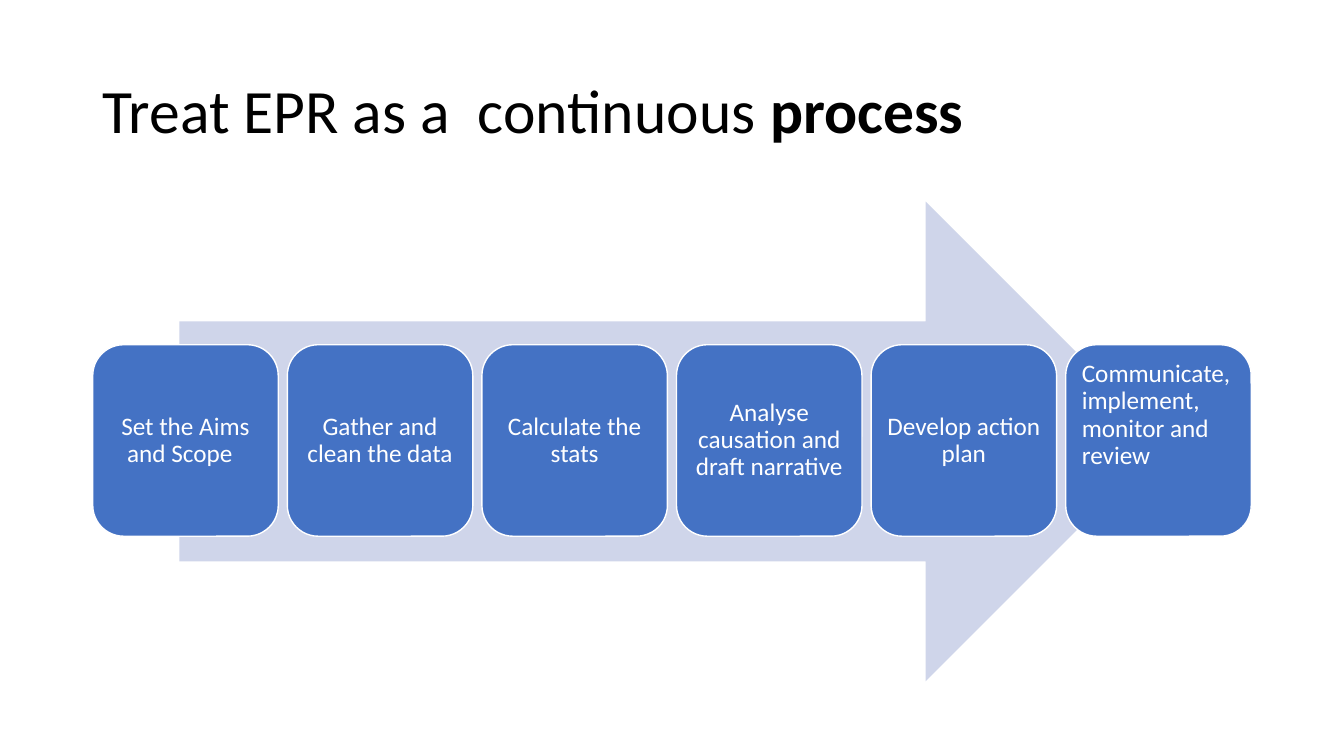
from dataclasses import dataclass

from pptx import Presentation
from pptx.dml.color import RGBColor
from pptx.enum.shapes import MSO_SHAPE
from pptx.enum.text import MSO_ANCHOR, PP_ALIGN
from pptx.util import Inches, Pt


@dataclass(frozen=True)
class Theme:
    font: str = "Calibri"
    title_size: int = 44
    step_size: int = 18
    black: str = "000000"
    white: str = "FFFFFF"
    arrow: str = "CFD5EA"
    step: str = "4472C4"


theme = Theme()


def write_text(shape, *runs, size, color, align=PP_ALIGN.LEFT,
               anchor=MSO_ANCHOR.MIDDLE, margins=(0.1, 0.05)):
    frame = shape.text_frame
    frame.word_wrap = True
    frame.vertical_anchor = anchor
    frame.margin_left = frame.margin_right = Inches(margins[0])
    frame.margin_top = frame.margin_bottom = Inches(margins[1])
    paragraph = frame.paragraphs[0]
    paragraph.alignment = align
    paragraph.line_spacing = 0.9
    for text, bold in runs:
        run = paragraph.add_run()
        run.text = text
        run.font.name = theme.font
        run.font.size = Pt(size)
        run.font.bold = bold
        run.font.color.rgb = RGBColor.from_string(color)


def add_filled_shape(kind, left, top, width, height, fill, line=None):
    shape = slide.shapes.add_shape(
        kind, Inches(left), Inches(top), Inches(width), Inches(height))
    shape.shadow.inherit = False
    shape.fill.solid()
    shape.fill.fore_color.rgb = RGBColor.from_string(fill)
    if line:
        shape.line.color.rgb = RGBColor.from_string(line)
        shape.line.width = Pt(1)
    else:
        shape.line.fill.background()
    return shape


presentation = Presentation()
presentation.slide_width = Inches(13.33)
presentation.slide_height = Inches(7.5)
slide = presentation.slides.add_slide(presentation.slide_layouts[6])

title = slide.shapes.add_textbox(Inches(0.92), Inches(0.4), Inches(11.5), Inches(1.45))
write_text(title, ("Treat EPR as a  continuous ", False), ("process", True),
           size=theme.title_size, color=theme.black)

add_filled_shape(MSO_SHAPE.RIGHT_ARROW, 1.78, 2, 9.78, 4.76, theme.arrow)

steps = [
    "Set the Aims and Scope  ",
    "Gather and clean the data",
    "Calculate the stats",
    "Analyse causation and draft narrative",
    "Develop action plan",
    "Communicate, implement, monitor and review",
]
step_pitch = 1.93
for index, step in enumerate(steps):
    box = add_filled_shape(MSO_SHAPE.ROUNDED_RECTANGLE, 0.92 + index * step_pitch,
                           3.42, 1.84, 1.9, theme.step, line=theme.white)
    is_last = index == len(steps) - 1
    write_text(box, (step, False), size=theme.step_size, color=theme.white,
               align=PP_ALIGN.LEFT if is_last else PP_ALIGN.CENTER,
               anchor=MSO_ANCHOR.TOP if is_last else MSO_ANCHOR.MIDDLE,
               margins=(0.07, 0.07))

presentation.save("out.pptx")
